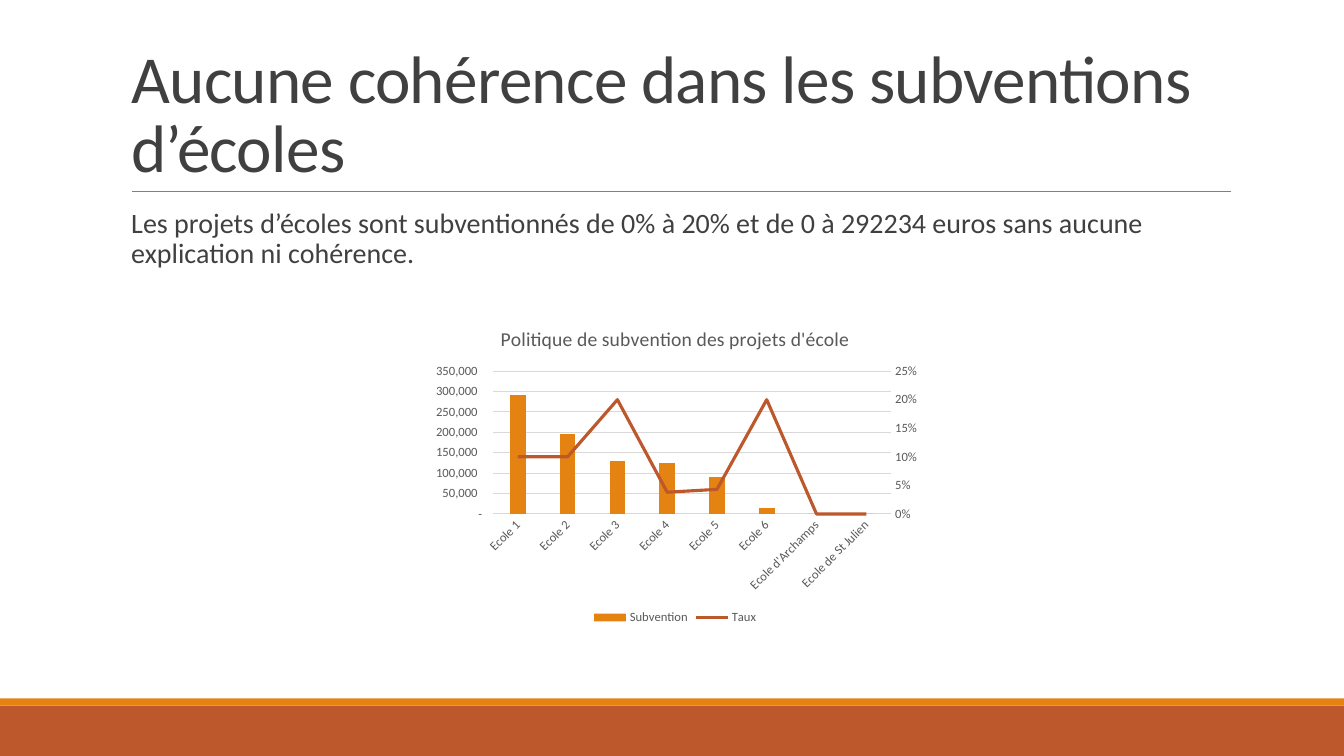
from copy import deepcopy

from lxml import etree
from pptx import Presentation
from pptx.chart.data import CategoryChartData
from pptx.dml.color import RGBColor
from pptx.enum.chart import XL_CHART_TYPE as CT, XL_LEGEND_POSITION as LP, XL_TICK_MARK as TM
from pptx.enum.shapes import MSO_CONNECTOR as MC, MSO_SHAPE as MS
from pptx.enum.text import MSO_ANCHOR as MA
from pptx.oxml.ns import qn
from pptx.util import Pt

PX = 9525
FONT = "Calibri"
ORANGE, RUST, DARK, GREY, PALE = "E48312", "BD582C", "404040", "595959", "D9D9D9"
EUROS = r'_-* #,##0\ _€_-;\-* #,##0\ _€_-;_-* "-"?'
SCHOOLS = ["Ecole 1", "Ecole 2", "Ecole 3", "Ecole 4", "Ecole 5", "Ecole 6",
           "Ecole d'Archamps", "Ecole de St Julien"]
GRANTS = [292000, 195000, 130000, 124000, 90000, 14000, 0, 0]
RATES = [0.1, 0.1, 0.2, 0.038, 0.043, 0.2, 0, 0]


def rgb(value):
    """Turn a hex string into a colour."""
    return RGBColor.from_string(value)


def emu(*lengths):
    """Turn px lengths into EMU."""
    return [n * PX for n in lengths]


def style(font, size, color):
    """Set the face, size and colour of a font."""
    font.name, font.size, font.bold = FONT, Pt(size), False
    font.color.rgb = rgb(color)


def add_text(s, box, text, size=20, color=DARK, anchor=MA.TOP, spacing=0.9, kern=0):
    """Write one paragraph in a box."""
    tf = s.shapes.add_textbox(*emu(*box)).text_frame
    tf.word_wrap, tf.vertical_anchor = True, anchor
    tf.margin_left = tf.margin_right = 10 * PX
    tf.margin_top = tf.margin_bottom = 5 * PX
    p = tf.paragraphs[0]
    p.line_spacing = spacing
    r = p.add_run()
    r.text = text
    style(r.font, size, color)
    r.font._element.set("spc", str(kern))


def add_band(s, box, color):
    """Draw a plain filled band."""
    sp = s.shapes.add_shape(MS.RECTANGLE, *emu(*box))
    sp.shadow.inherit = False
    sp.fill.solid()
    sp.fill.fore_color.rgb = rgb(color)
    sp.line.fill.background()


def add_footer(s, x, y, w, h):
    """Draw the two-tone footer."""
    add_band(s, (x, y + 7, w, h - 7), RUST)
    add_band(s, (x, y, w, 7), ORANGE)


def add_heading(s, x, y, w, h):
    """Write the title above its rule."""
    rule = s.shapes.add_connector(MC.STRAIGHT, *emu(x + 11, y + h, x + w + 1, y + h))
    rule.line.color.rgb, rule.line.width = rgb("808080"), Pt(0.5)
    etree.SubElement(rule._element.spPr, qn("a:effectLst"))
    add_text(s, (x, y, w, h), "Aucune cohérence dans les subventions d’écoles",
             size=48, anchor=MA.BOTTOM, spacing=0.85, kern=-50)


def style_axis(axis):
    """Give an axis its labels and no tick marks."""
    style(axis.tick_labels.font, 9, GREY)
    axis.major_tick_mark = axis.minor_tick_mark = TM.NONE


def set_val(parent, tag, value):
    """Set the val attribute of a child element."""
    parent.find(qn(tag)).set("val", value)


def drop(parent, tag):
    """Remove the children that have a tag."""
    for child in parent.findall(qn(tag)):
        parent.remove(child)


def move_to_right_axis(chart):
    """Turn the last series into a line on a second axis."""
    area = chart._chartSpace.chart.plotArea
    bars, cat, val = (area.find(qn(t)) for t in ("c:barChart", "c:catAx", "c:valAx"))
    ser = bars.findall(qn("c:ser"))[-1]
    drop(ser, "c:invertIfNegative")
    marker = etree.Element(qn("c:marker"))
    etree.SubElement(marker, qn("c:symbol"), val="none")
    ser.find(qn("c:spPr")).addnext(marker)
    drop(ser, "c:smooth")
    etree.SubElement(ser, qn("c:smooth"), val="0")

    lines = etree.Element(qn("c:lineChart"))
    etree.SubElement(lines, qn("c:grouping"), val="standard")
    etree.SubElement(lines, qn("c:varyColors"), val="0")
    lines.append(ser)
    etree.SubElement(lines, qn("c:marker"), val="1")
    bars.addnext(lines)

    right, hidden = deepcopy(val), deepcopy(cat)
    for axis, own, other in ((hidden, "5001", "5002"), (right, "5002", "5001")):
        set_val(axis, "c:axId", own)
        set_val(axis, "c:crossAx", other)
        etree.SubElement(lines, qn("c:axId"), val=own)
    set_val(hidden, "c:delete", "1")
    set_val(right, "c:axPos", "r")
    set_val(right, "c:crosses", "max")
    drop(right, "c:majorGridlines")
    right.find(qn("c:numFmt")).set("formatCode", "0%")
    val.addnext(right)
    right.addnext(hidden)


def add_grant_chart(s, x, y, w, h):
    """Draw grants as columns and rates as a line."""
    data = CategoryChartData()
    data.categories = SCHOOLS
    data.add_series("Subvention", GRANTS)
    data.add_series("Taux", RATES, "0%")
    chart = s.shapes.add_chart(CT.COLUMN_CLUSTERED, *emu(x, y, w, h), data).chart
    style(chart.font, 10, "000000")

    title = chart.chart_title
    title.text_frame.text = "Politique de subvention des projets d'école"
    style(title.text_frame.paragraphs[0].runs[0].font, 14, GREY)
    title.include_in_layout = False
    chart.has_legend = True
    chart.legend.position, chart.legend.include_in_layout = LP.BOTTOM, False
    style(chart.legend.font, 9, GREY)

    cat, val = chart.category_axis, chart.value_axis
    for axis in (cat, val):
        style_axis(axis)
    cat.format.line.color.rgb, cat.format.line.width = rgb(PALE), Pt(0.75)
    cat._element.find(qn("c:txPr")).find(qn("a:bodyPr")).set("rot", "-2700000")
    val.format.line.fill.background()
    grid = val.major_gridlines.format.line
    grid.color.rgb, grid.width = rgb(PALE), Pt(0.75)
    val.tick_labels.number_format = EUROS
    val.tick_labels.number_format_is_linked = False

    plot = chart.plots[0]
    plot.gap_width, plot.overlap, plot.vary_by_categories = 219, -27, False
    grants, rates = plot.series
    grants.format.fill.solid()
    grants.format.fill.fore_color.rgb = rgb(ORANGE)
    rates.format.line.color.rgb, rates.format.line.width = rgb(RUST), Pt(2.25)
    move_to_right_axis(chart)


def main():
    """Build and save the slide."""
    prs = Presentation()
    prs.slide_width, prs.slide_height = emu(1280, 720)
    s = prs.slides.add_slide(prs.slide_layouts[6])
    add_footer(s, 0, 665, 1280, 55)
    add_heading(s, 115, 30, 1056, 152)
    add_text(s, (115, 194, 1056, 80),
             "Les projets d’écoles sont subventionnés de 0% à 20% et de 0 à 292234 euros "
             "sans aucune explication ni cohérence.")
    add_grant_chart(s, 403, 295, 480, 304)
    prs.save("out.pptx")


if __name__ == "__main__":
    main()
